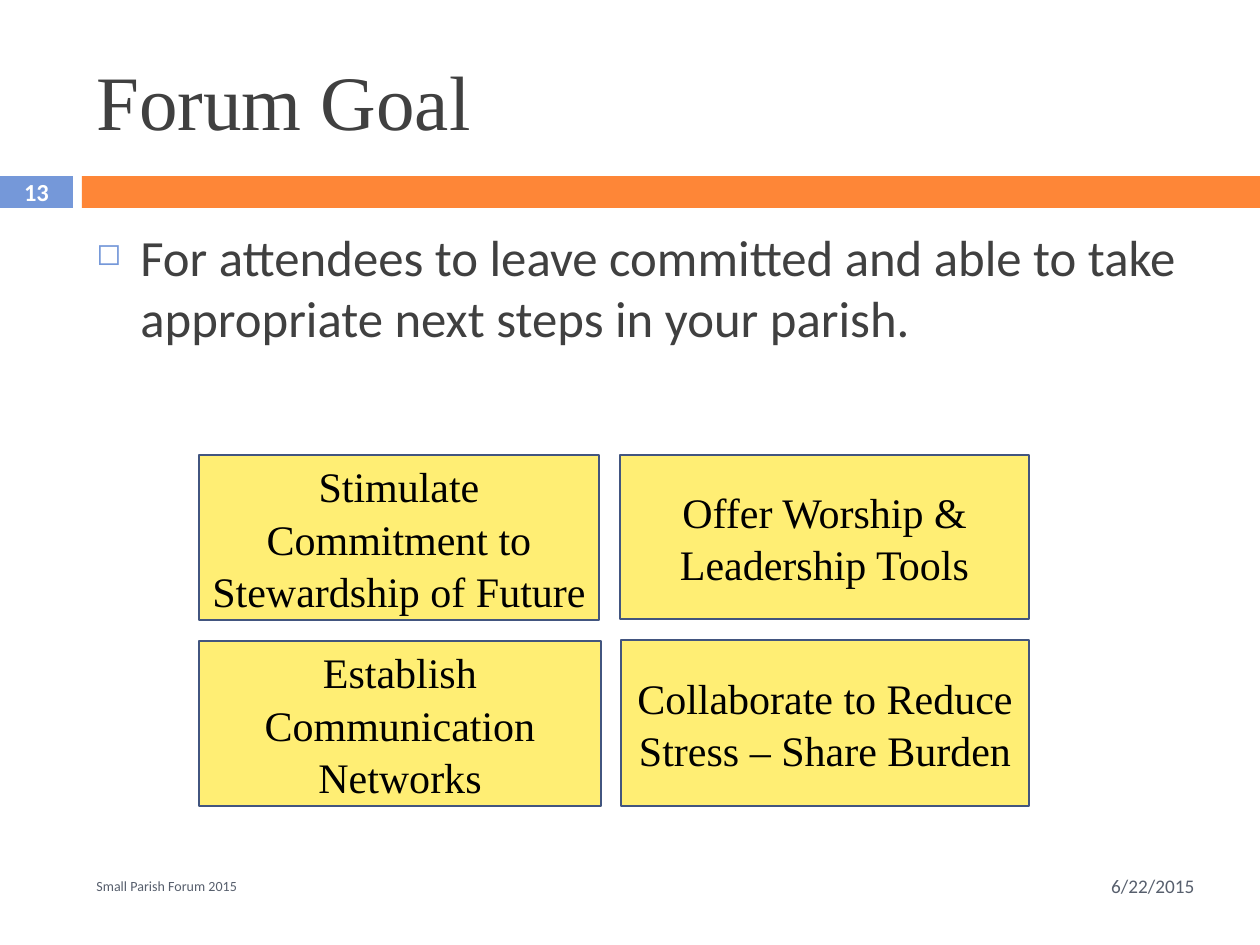
from dataclasses import dataclass

from lxml import etree
from pptx import Presentation
from pptx import util as u
from pptx.dml.color import RGBColor
from pptx.enum import shapes, text
from pptx.oxml import ns

SCALE = 914400 / 126


@dataclass(frozen=True)
class Theme:
    serif: str = "Times New Roman"
    sans: str = "Calibri"
    blue: str = "7598D9"
    orange: str = "FE8637"
    yellow: str = "FFEE74"
    outline: str = "42557F"
    heading: str = "404040"
    muted: str = "575F6D"
    black: str = "000000"
    white: str = "FFFFFF"
    title: int = 44
    body: int = 29
    goal: int = 24
    number: int = 14
    date: int = 11
    footer: int = 8


THEME = Theme()
LEFT, MIDDLE, RIGHT = text.PP_ALIGN.LEFT, text.PP_ALIGN.CENTER, text.PP_ALIGN.RIGHT


def px(n):
    return u.Emu(round(n * SCALE))


def color(value):
    return RGBColor.from_string(value)


def write(sp, words, font, size, ink, align=LEFT, bold=False):
    tf = sp.text_frame
    tf.word_wrap = True
    tf.vertical_anchor = text.MSO_ANCHOR.MIDDLE
    tf.text = words
    p = tf.paragraphs[0]
    p.alignment = align
    f = p.runs[0].font
    f.name, f.size, f.bold = font, u.Pt(size), bold
    f.color.rgb = color(ink)
    return p


def add_rect(s, box, fill, line=None):
    sp = s.shapes.add_shape(shapes.MSO_SHAPE.RECTANGLE, *map(px, box))
    sp.shadow.inherit = False
    sp.fill.solid()
    sp.fill.fore_color.rgb = color(fill)
    if line:
        sp.line.color.rgb = color(line)
        sp.line.width = u.Pt(0.75)
    else:
        sp.line.fill.background()
    return sp


def add_label(s, box, words, font, size, ink, **style):
    sp = s.shapes.add_textbox(*map(px, box))
    write(sp, words, font, size, ink, **style)
    return sp


def add_bullet(s, box, words):
    sp = add_label(s, box, words, THEME.sans, THEME.body, THEME.heading)
    sp.text_frame.vertical_anchor = text.MSO_ANCHOR.TOP
    p = sp.text_frame.paragraphs[0]
    p.space_before = u.Pt(7)
    pPr = p._p.get_or_add_pPr()
    pPr.set("marL", str(px(44)))
    pPr.set("indent", str(px(-44)))
    clr = etree.SubElement(pPr, ns.qn("a:buClr"))
    etree.SubElement(clr, ns.qn("a:srgbClr"), val=THEME.blue)
    etree.SubElement(pPr, ns.qn("a:buSzPct"), val="60000")
    etree.SubElement(pPr, ns.qn("a:buChar"), char="◻")


def add_goal(s, box, words):
    sp = add_rect(s, box, THEME.yellow, THEME.outline)
    sp.text_frame.margin_left = sp.text_frame.margin_right = px(6)
    p = write(sp, words, THEME.serif, THEME.goal, THEME.black, MIDDLE)
    p.line_spacing = 1.04


def main():
    prs = Presentation()
    prs.slide_width, prs.slide_height = px(1260), px(945)
    s = prs.slides.add_slide(prs.slide_layouts[6])

    add_rect(s, (0, 176, 73, 32), THEME.blue)
    add_rect(s, (82, 176, 1178, 32), THEME.orange)
    add_label(s, (84, 32, 1124, 136), "Forum Goal",
              THEME.serif, THEME.title, THEME.heading)
    add_label(s, (1071, 861, 136, 50), "6/22/2015",
              THEME.sans, THEME.date, THEME.muted, align=RIGHT)
    add_label(s, (84, 861, 966, 50), "Small Parish Forum 2015",
              THEME.sans, THEME.footer, THEME.muted)
    add_label(s, (0, 175, 73, 34), "13", THEME.sans, THEME.number,
              THEME.white, align=MIDDLE, bold=True)
    add_bullet(s, (84, 220, 1124, 620),
               "For attendees to leave committed and able to take "
               "appropriate next steps in your parish.")

    goals = [
        ((199, 455, 400, 165), "Stimulate Commitment to Stewardship of Future"),
        ((620, 455, 409, 164), "Offer Worship & Leadership Tools"),
        ((199, 641, 402, 165), "Establish Communication Networks"),
        ((621, 640, 408, 166), "Collaborate to Reduce Stress – Share Burden"),
    ]
    for box, words in goals:
        add_goal(s, box, words)

    prs.save("out.pptx")


if __name__ == "__main__":
    main()
